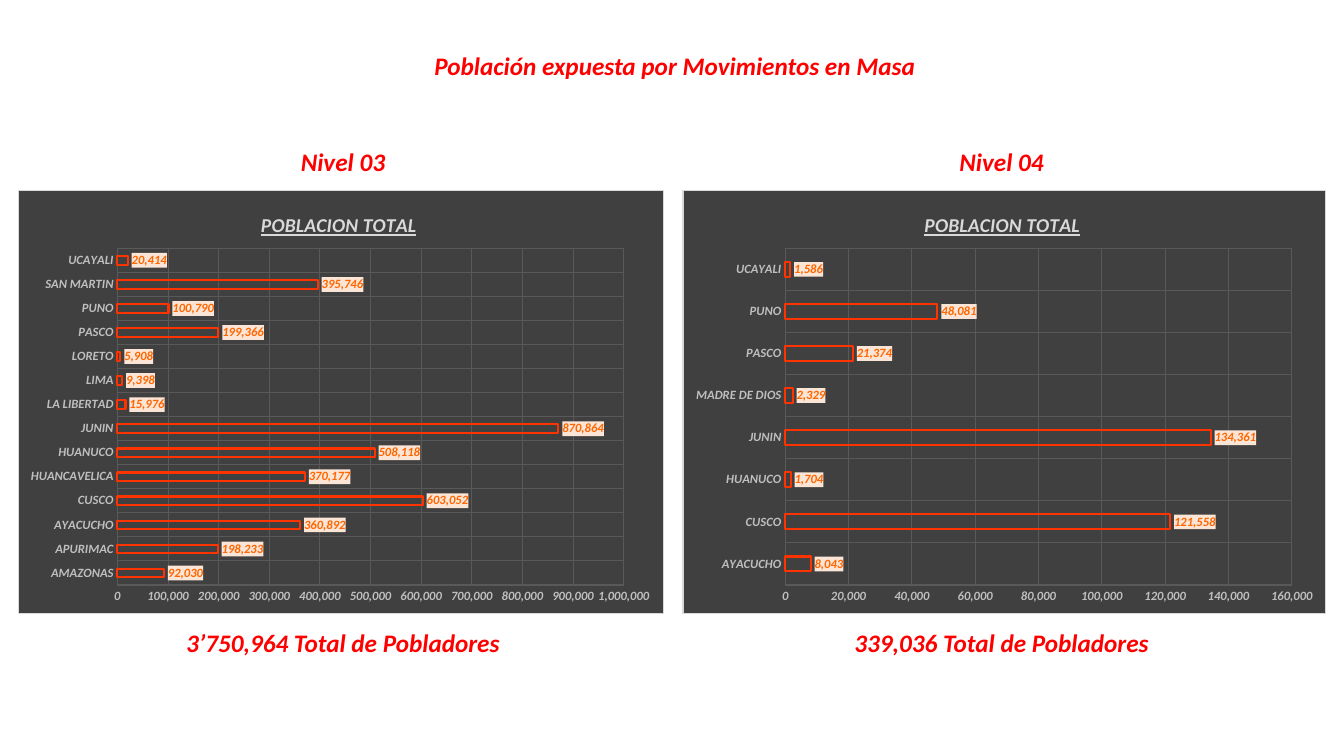
from lxml.etree import SubElement
from pptx import Presentation
from pptx.chart.data import CategoryChartData
from pptx.dml.color import RGBColor
from pptx.enum.chart import XL_CHART_TYPE, XL_LABEL_POSITION, XL_TICK_MARK
from pptx.enum.text import MSO_ANCHOR, PP_ALIGN
from pptx.oxml import parse_xml
from pptx.oxml.ns import nsdecls, qn
from pptx.util import Pt

COLORS = {
    "red": "FF0000", "panel": "404040", "border": "D9D9D9", "title": "D9D9D9",
    "axis": "BFBFBF", "grid": "595959", "bar": "FF3300", "label": "FF6600",
    "label_fill": "FBE5D6",
}
BASE = {"name": "Calibri", "bold": True, "italic": True}
HEADING = {**BASE, "size": Pt(18)}
CHART_TITLE = {**BASE, "size": Pt(14), "underline": True}
CHART_TEXT = {**BASE, "size": Pt(9)}
CHART_TOP, CHART_HEIGHT = 136, 302.5
LEVEL_TOP, TOTAL_TOP, TEXT_HEIGHT = 101, 444.5, 29

LEVELS = [
    {
        "level": "Nivel 03", "total": "3’750,964 Total de Pobladores",
        "left": 13, "width": 461.5, "center": 245,
        "plot": (0.153, 0.136, 0.785, 0.797), "max": 1000000, "step": 100000,
        "people": {
            "AMAZONAS": 92030, "APURIMAC": 198233, "AYACUCHO": 360892,
            "CUSCO": 603052, "HUANCAVELICA": 370177, "HUANUCO": 508118,
            "JUNIN": 870864, "LA LIBERTAD": 15976, "LIMA": 9398,
            "LORETO": 5908, "PASCO": 199366, "PUNO": 100790,
            "SAN MARTIN": 395746, "UCAYALI": 20414,
        },
    },
    {
        "level": "Nivel 04", "total": "339,036 Total de Pobladores",
        "left": 487.5, "width": 460, "center": 715.5,
        "plot": (0.159, 0.136, 0.788, 0.797), "max": 160000, "step": 20000,
        "people": {
            "AYACUCHO": 8043, "CUSCO": 121558, "HUANUCO": 1704,
            "JUNIN": 134361, "MADRE DE DIOS": 2329, "PASCO": 21374,
            "PUNO": 48081, "UCAYALI": 1586,
        },
    },
]


def rgb(name):
    return RGBColor.from_string(COLORS[name])


def style_font(font, formats, color):
    for key, value in formats.items():
        setattr(font, key, value)
    font.color.rgb = rgb(color)


def style_line(line, color, width):
    line.color.rgb = rgb(color)
    line.width = Pt(width)


def write_heading(sp, text, wrap=True):
    tf = sp.text_frame
    tf.word_wrap = wrap
    tf.vertical_anchor = MSO_ANCHOR.MIDDLE
    p = tf.paragraphs[0]
    p.alignment = PP_ALIGN.CENTER
    r = p.add_run()
    r.text = text
    style_font(r.font, HEADING, "red")


def add_title(slide, text):
    sp = slide.shapes.title
    sp.left, sp.top, sp.width, sp.height = Pt(301), Pt(32.5), Pt(362), Pt(29)
    write_heading(sp, text, wrap=False)


def add_caption(slide, text, center, top, width):
    sp = slide.shapes.add_textbox(
        Pt(center - width / 2), Pt(top), Pt(width), Pt(TEXT_HEIGHT))
    write_heading(sp, text)


def set_layout(parent, index, **values):
    """Give a chart part a manual layout, in fractions of the chart."""
    for old in parent.findall(qn("c:layout")):
        parent.remove(old)
    layout = parse_xml(f"<c:layout {nsdecls('c')}><c:manualLayout/></c:layout>")
    for key, value in values.items():
        SubElement(layout[0], qn(f"c:{key}")).set("val", str(value))
    parent.insert(index, layout)


def filled(color, border=None):
    """Return chart shape properties with a solid fill and optional border."""
    def solid(name):
        return f'<a:solidFill><a:srgbClr val="{COLORS[name]}"/></a:solidFill>'
    line = f'<a:ln w="{Pt(0.75)}">{solid(border)}</a:ln>' if border else ""
    return parse_xml(
        f"<c:spPr {nsdecls('c', 'a')}>{solid(color)}{line}</c:spPr>")


def style_axis(axis):
    axis.major_tick_mark = axis.minor_tick_mark = XL_TICK_MARK.NONE
    axis.format.line.fill.background()
    axis.has_major_gridlines = True
    style_line(axis.major_gridlines.format.line, "grid", 0.75)
    style_font(axis.tick_labels.font, CHART_TEXT, "axis")


def style_labels(plot):
    plot.has_data_labels = True
    labels = plot.data_labels
    formats = {
        "show_value": True, "position": XL_LABEL_POSITION.OUTSIDE_END,
        "number_format": "#,##0", "number_format_is_linked": False,
    }
    for key, value in formats.items():
        setattr(labels, key, value)
    style_font(labels.font, CHART_TEXT, "label")
    labels._element.find(qn("c:numFmt")).addnext(filled("label_fill"))


def add_population_chart(slide, level):
    data = CategoryChartData(number_format="#,##0")
    data.categories = level["people"].keys()
    data.add_series("Series 1", level["people"].values())
    chart = slide.shapes.add_chart(
        XL_CHART_TYPE.BAR_CLUSTERED, Pt(level["left"]), Pt(CHART_TOP),
        Pt(level["width"]), Pt(CHART_HEIGHT), data).chart
    chart.has_legend = False
    chart.font.name, chart.font.size = "Calibri", Pt(10)

    title = chart.chart_title
    r = title.text_frame.paragraphs[0].add_run()
    r.text = "POBLACION TOTAL"
    style_font(r.font, CHART_TITLE, "title")
    set_layout(title._element, 1, xMode="edge", yMode="edge", x=0.37, y=0.04)

    for axis in (chart.category_axis, chart.value_axis):
        style_axis(axis)
    axis = chart.value_axis
    axis.minimum_scale, axis.maximum_scale = 0, level["max"]
    axis.major_unit = level["step"]
    axis.tick_labels.number_format = "#,##0"
    axis.tick_labels.number_format_is_linked = False

    plot = chart.plots[0]
    plot.gap_width, plot.overlap = 182, -50
    plot.vary_by_categories = False
    bars = plot.series[0].format
    bars.fill.background()
    style_line(bars.line, "bar", 1.5)
    style_labels(plot)

    body = chart._chartSpace.find(qn("c:chart"))
    body.addnext(filled("panel", "border"))
    x, y, w, h = level["plot"]
    set_layout(body.find(qn("c:plotArea")), 0, layoutTarget="inner",
               xMode="edge", yMode="edge", x=x, y=y, w=w, h=h)


def main():
    prs = Presentation()
    prs.slide_width, prs.slide_height = Pt(960), Pt(540)
    slide = prs.slides.add_slide(prs.slide_layouts[5])
    add_title(slide, "Población expuesta por Movimientos en Masa")
    for level in LEVELS:
        add_caption(slide, level["level"], level["center"], LEVEL_TOP, 80)
        add_population_chart(slide, level)
        add_caption(slide, level["total"], level["center"], TOTAL_TOP, 242)
    prs.save("out.pptx")


if __name__ == "__main__":
    main()
